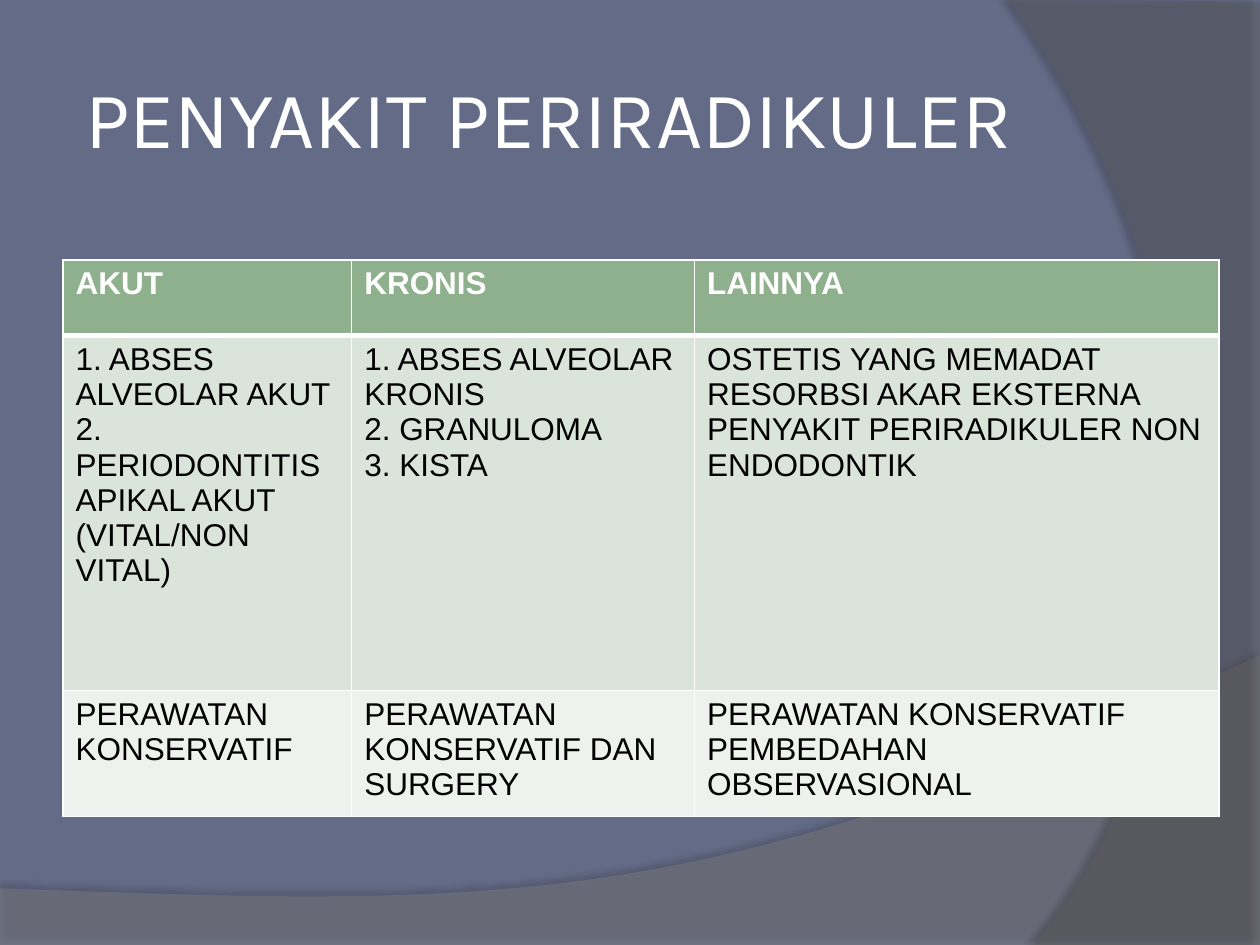
"""Build the slide on periradicular diseases."""
from lxml import etree
from pptx import Presentation
from pptx import util as u
from pptx.dml.color import RGBColor
from pptx.enum import text
from pptx.oxml import ns

COLORS = {
    "background": "646B86", "wave": "7F7F7F", "arc": "5E5E5E",
    "white": "FFFFFF", "black": "000000",
    "header": "8FB08C", "diseases": "DBE4DA", "treatment": "EEF2EE",
}

TITLE = "PENYAKIT PERIRADIKULER"
ROWS = [
    ("header", 1.52, [["AKUT"], ["KRONIS"], ["LAINNYA"]]),
    ("diseases", 7.16, [
        ["1. ABSES ALVEOLAR AKUT",
         "2. PERIODONTITIS APIKAL AKUT (VITAL/NON VITAL)"],
        ["1. ABSES ALVEOLAR KRONIS", "2. GRANULOMA", "3. KISTA"],
        ["OSTETIS YANG MEMADAT", "RESORBSI AKAR EKSTERNA",
         "PENYAKIT PERIRADIKULER NON ENDODONTIK"],
    ]),
    ("treatment", 2.4, [
        ["PERAWATAN KONSERVATIF"],
        ["PERAWATAN KONSERVATIF DAN SURGERY"],
        ["PERAWATAN KONSERVATIF", "PEMBEDAHAN", "OBSERVASIONAL"],
    ]),
]
COLUMN_WIDTHS = [5.82, 6.91, 10.57]

SWEEPS = [
    {"color": "wave", "opacity": 45, "shadow": (35, 3.5, 270),
     "corners": [(0, 17.91), (0, 19.08), (25.4, 19.08), (25.4, 13.21)],
     "curve": [(14.2, 18.52), (9.93, 18.26), (0, 17.91)]},
    {"color": "arc", "opacity": 40, "shadow": (45, 4, 180),
     "corners": [(25.4, 0.05), (25.4, 19.05), (20.85, 19.05)],
     "curve": [(23.75, 15.72), (25.86, 7.62), (20.32, 0)]},
]
CURVE_STEPS = 48


def rgb(name):
    return RGBColor.from_string(COLORS[name])


def add_node(parent, tag, **attributes):
    return etree.SubElement(parent, ns.qn(tag),
                            {key: str(value) for key, value in attributes.items()})


def write(frame, lines, *, size, font, color, bold=False):
    for index, line in enumerate(lines):
        paragraph = frame.paragraphs[0] if index == 0 else frame.add_paragraph()
        run = paragraph.add_run()
        run.text = line
        run.font.size = u.Pt(size)
        run.font.name = font
        run.font.bold = bold
        run.font.color.rgb = rgb(color)


def bezier(start, first, second, end):
    for step in range(1, CURVE_STEPS + 1):
        t = step / CURVE_STEPS
        weights = ((1 - t) ** 3, 3 * t * (1 - t) ** 2, 3 * t * t * (1 - t), t ** 3)
        points = (start, first, second, end)
        yield tuple(sum(w * p[axis] for w, p in zip(weights, points))
                    for axis in (0, 1))


def add_sweep(slide, sweep):
    corners = sweep["corners"]
    outline = corners + list(bezier(corners[-1], *sweep["curve"]))
    start, *rest = [(u.Cm(x), u.Cm(y)) for x, y in outline]
    builder = slide.shapes.build_freeform(*start)
    builder.add_line_segments(rest, close=True)
    shape = builder.convert_to_shape()
    shape.line.fill.background()
    shape.fill.solid()
    shape.fill.fore_color.rgb = rgb(sweep["color"])
    properties = shape.element.spPr
    tint = properties.find(".//" + ns.qn("a:srgbClr"))
    add_node(tint, "a:alpha", val=sweep["opacity"] * 1000)
    shape.shadow.inherit = False
    opacity, distance, angle = sweep["shadow"]
    shadow = add_node(properties.find(ns.qn("a:effectLst")), "a:outerShdw",
                      blurRad=u.Pt(4), dist=u.Pt(distance),
                      dir=angle * 60000, algn="ctr", rotWithShape=0)
    shade = add_node(shadow, "a:srgbClr", val=COLORS["black"])
    add_node(shade, "a:alpha", val=opacity * 1000)


def add_borders(cell, widths):
    properties = cell._tc.get_or_add_tcPr()
    for side, width in widths.items():
        line = add_node(properties, "a:ln" + side, w=u.Pt(width))
        add_node(add_node(line, "a:solidFill"), "a:srgbClr", val=COLORS["white"])


def add_disease_table(slide):
    table = slide.shapes.add_table(
        len(ROWS), len(COLUMN_WIDTHS), u.Cm(1.27), u.Cm(5.24),
        u.Cm(sum(COLUMN_WIDTHS)), u.Cm(sum(height for _, height, _ in ROWS))).table
    for column, width in zip(table.columns, COLUMN_WIDTHS):
        column.width = u.Cm(width)
    for index, (part, height, entries) in enumerate(ROWS):
        table.rows[index].height = u.Cm(height)
        heading = part == "header"
        for cell, lines in zip(table.rows[index].cells, entries):
            write(cell.text_frame, lines, size=18, font="Arial", bold=heading,
                  color="white" if heading else "black")
            add_borders(cell, {"L": 1, "R": 1, "T": 3 if index == 1 else 1,
                               "B": 3 if heading else 1})
            cell.fill.solid()
            cell.fill.fore_color.rgb = rgb(part)


def add_title(slide):
    frame = slide.shapes.add_textbox(
        u.Cm(1.27), u.Cm(0.76), u.Cm(20.75), u.Cm(3.18)).text_frame
    frame.word_wrap = True
    frame.vertical_anchor = text.MSO_ANCHOR.MIDDLE
    frame.margin_left = u.Cm(0.45)
    frame.margin_right = frame.margin_top = frame.margin_bottom = u.Cm(0.13)
    write(frame, [TITLE], size=46, font="Karla", color="white")


def main():
    deck = Presentation()
    deck.slide_width, deck.slide_height = u.Cm(25.4), u.Cm(19.05)
    slide = deck.slides.add_slide(deck.slide_layouts[6])
    slide.background.fill.solid()
    slide.background.fill.fore_color.rgb = rgb("background")
    for sweep in SWEEPS:
        add_sweep(slide, sweep)
    add_title(slide)
    add_disease_table(slide)
    deck.save("out.pptx")


if __name__ == "__main__":
    main()
